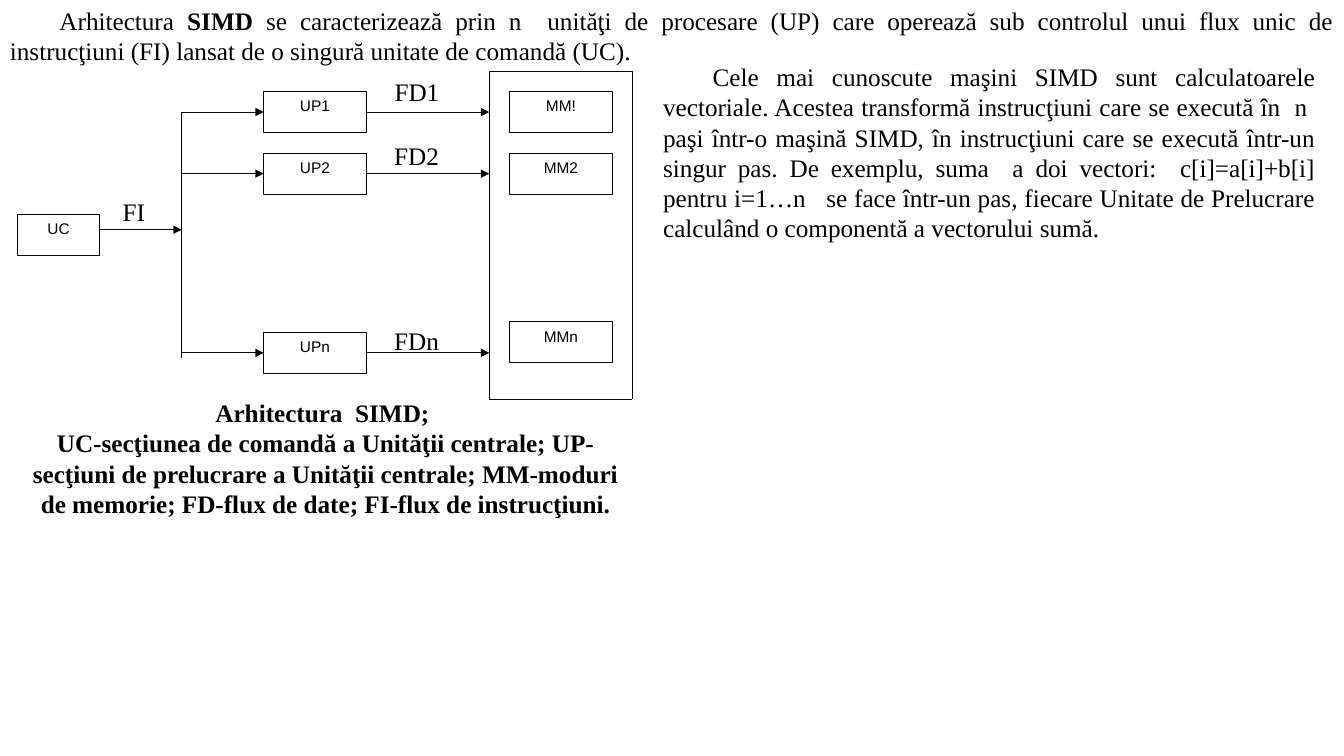
"""Build the SIMD architecture slide."""
import pptx
import pptx.dml.color
import pptx.enum.shapes
import pptx.enum.text
import pptx.oxml
import pptx.oxml.ns
import pptx.util

Pt = pptx.util.Pt
qn = pptx.oxml.ns.qn
ALIGN = pptx.enum.text.PP_ALIGN
FIT = pptx.enum.text.MSO_AUTO_SIZE
BLACK = pptx.dml.color.RGBColor(0, 0, 0)
WHITE = pptx.dml.color.RGBColor(255, 255, 255)

deck = pptx.Presentation()
deck.slide_width, deck.slide_height = Pt(960), Pt(540)
slide = deck.slides.add_slide(deck.slide_layouts[6])
shapes = slide.shapes


def write(para, parts, size, font, align):
    para.alignment = align
    for text, bold in parts:
        run = para.add_run()
        run.text = text
        run.font.size, run.font.name = Pt(size), font
        run.font.bold = bold
        run.font.color.rgb = BLACK


def link(x1, y1, x2, y2, arrow=False):
    line = shapes.add_connector(pptx.enum.shapes.MSO_CONNECTOR.STRAIGHT,
                                Pt(x1), Pt(y1), Pt(x2), Pt(y2))
    line.line.color.rgb = BLACK
    line.line.width = Pt(0.75)
    props = line.element.spPr
    if arrow:
        tail = pptx.oxml.parse_xml(
            '<a:tailEnd xmlns:a="http://schemas.openxmlformats.org/'
            'drawingml/2006/main" type="triangle"/>')
        props.find(qn("a:ln")).append(tail)
    props.append(props.makeelement(qn("a:effectLst"), {}))
    return line


HIGH = 29.3
UNIT, MEMORY = 188.3, 364
WIDE = 73.4
BUS = 129.8
LEFT, RIGHT, TOP, BOTTOM = 349.5, 451.8, 51, 285.2

boxes = {}
for name, x, y, width in [
    ("UC", 12.6, 153.2, 58.5),
    ("UP1", UNIT, 65.4, WIDE),
    ("UP2", UNIT, 109.4, WIDE),
    ("UPn", UNIT, 237.4, WIDE),
    ("MM!", MEMORY, 65.4, WIDE),
    ("MM2", MEMORY, 109.4, WIDE),
    ("MMn", MEMORY, 230, WIDE),
]:
    box = shapes.add_shape(pptx.enum.shapes.MSO_SHAPE.RECTANGLE,
                           Pt(x), Pt(y), Pt(width), Pt(HIGH))
    box.shadow.inherit = False
    box.fill.solid()
    box.fill.fore_color.rgb = WHITE
    box.line.color.rgb = BLACK
    box.line.width = Pt(0.75)
    frame = box.text_frame
    frame.word_wrap = True
    frame.vertical_anchor = pptx.enum.text.MSO_ANCHOR.TOP
    write(frame.paragraphs[0], [(name, False)], 11, "Arial", ALIGN.CENTER)
    boxes[name] = box

for ends in [(LEFT, TOP, RIGHT, TOP), (LEFT, TOP, LEFT, BOTTOM),
             (RIGHT, TOP, RIGHT, BOTTOM), (LEFT, BOTTOM, RIGHT, BOTTOM),
             (BUS, 255.6, BUS, 80.05)]:
    link(*ends)

link(71.1, 164.1, BUS, 164.1, True)
for name in ("UP1", "UP2", "UPn"):
    unit = boxes[name]
    mid = unit.top.pt + HIGH / 2
    link(BUS, mid, UNIT, mid, True).end_connect(unit, 1)
    link(UNIT + WIDE, mid, LEFT, mid, True).begin_connect(unit, 3)

intro = [
    ("Arhitectura", False),
    (" SIMD ", True),
    ("se caracterizează prin n  unităţi de procesare (UP) care operează sub "
     "controlul unui flux unic de instrucţiuni (FI) lansat de o singură "
     "unitate de comandă (UC).", False),
]
legend = ("UC-secţiunea de comandă a Unităţii centrale; UP-secţiuni de "
          "prelucrare a Unităţii centrale; MM-moduri de memorie; FD-flux de "
          "date; FI-flux de instrucţiuni.")
detail = ("Cele mai cunoscute maşini SIMD sunt calculatoarele vectoriale. "
          "Acestea transformă instrucţiuni care se execută în  n  paşi "
          "într-o maşină SIMD, în instrucţiuni care se execută într-un "
          "singur pas. De exemplu, suma  a doi vectori:  c[i]=a[i]+b[i] "
          "pentru i=1…n   se face într-un pas, fiecare Unitate de Prelucrare "
          "calculând o componentă a vectorului sumă.")

for x, y, width, height, wrap, align, paras in [
    (0, 0, 960, 51, True, ALIGN.JUSTIFY, [intro]),
    (45, 136.8, 66.2, 29, False, ALIGN.JUSTIFY, [[("FI", False)]]),
    (274.7, 51.1, 46.8, 29, False, ALIGN.LEFT, [[("FD1", False)]]),
    (274.5, 96.5, 46.8, 29, False, ALIGN.LEFT, [[("FD2", False)]]),
    (274.5, 229, 46.8, 29, False, ALIGN.LEFT, [[("FDn", False)]]),
    (13, 280.4, 439.2, 94.3, True, ALIGN.CENTER,
     [[("Arhitectura  SIMD; ", True)], [(legend, True)]]),
    (466.6, 40.3, 480.2, 138.2, True, ALIGN.JUSTIFY, [[(detail, False)]]),
]:
    note = shapes.add_textbox(Pt(x), Pt(y), Pt(width), Pt(height))
    frame = note.text_frame
    frame.word_wrap = wrap
    frame.auto_size = FIT.SHAPE_TO_FIT_TEXT
    for index, parts in enumerate(paras):
        para = frame.add_paragraph() if index else frame.paragraphs[0]
        write(para, parts, 18, "Times New Roman", align)
        if align == ALIGN.JUSTIFY:
            para._p.get_or_add_pPr().set("indent", str(Pt(35.4)))

deck.save("out.pptx")
